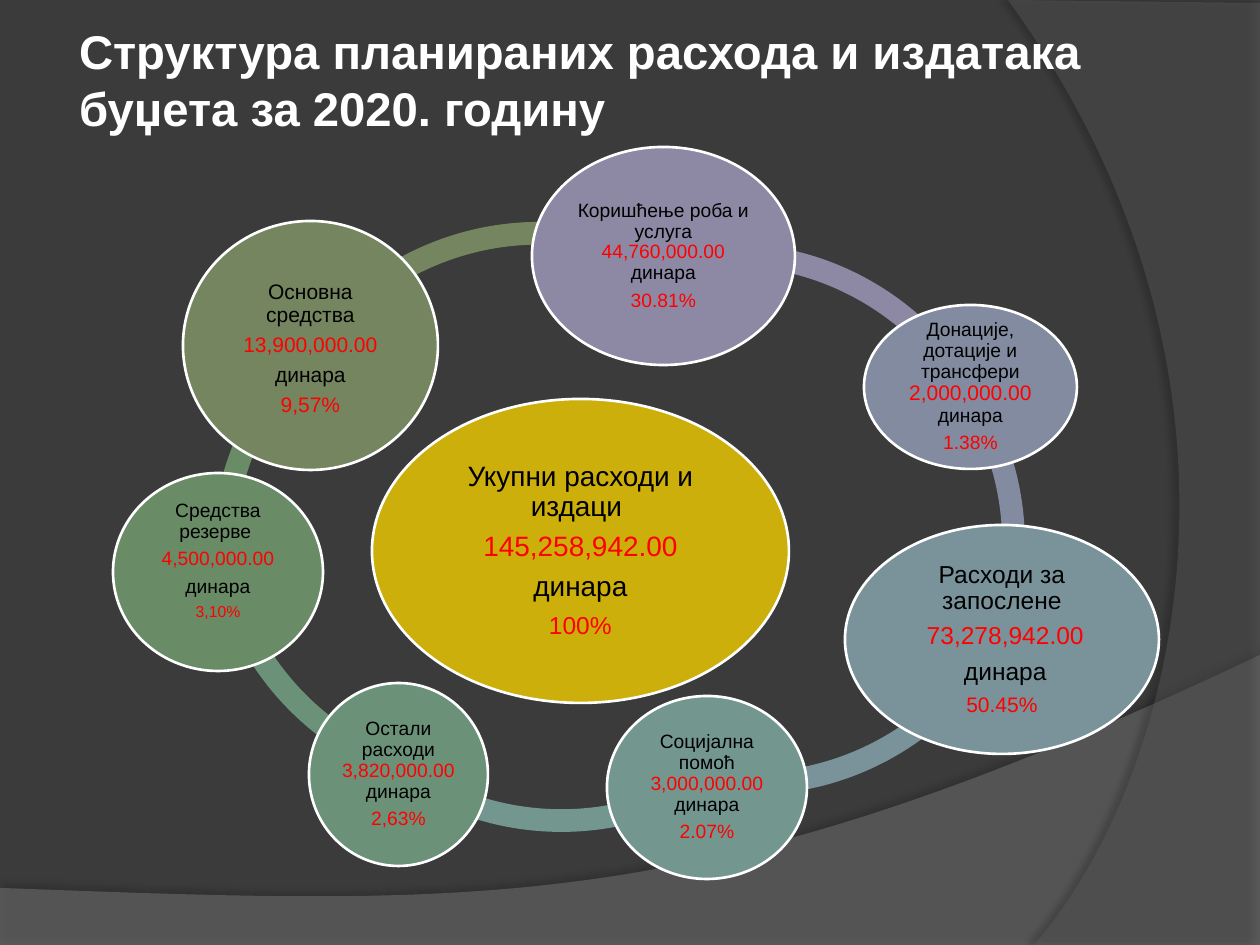
from dataclasses import dataclass
from typing import NamedTuple

from lxml.etree import SubElement
from pptx import Presentation
from pptx.dml.color import RGBColor
from pptx.enum.shapes import MSO_SHAPE
from pptx.enum.text import MSO_ANCHOR, MSO_AUTO_SIZE, PP_ALIGN
from pptx.oxml.ns import qn
from pptx.util import Pt

EMU_PER_PX = 914400 / 126
FONT = "Arial"
BLACK, RED, WHITE = "000000", "FF0000", "FFFFFF"
ARC_SIZE = 581
ARC_THICKNESS = 0.039
INSET = 3


class Point(NamedTuple):
    x: int
    y: int


class Box(NamedTuple):
    left: int
    top: int
    width: int
    height: int


class Piece(NamedTuple):
    text: str
    size: int
    color: str = BLACK


@dataclass
class Bubble:
    box: Box
    fill: str
    paragraphs: list[list[Piece]]
    extra_top: int = 0
    extra_side: int = 0
    extra_bottom: int = 0


@dataclass
class Arc:
    position: Point
    start: float  # degrees, clockwise from the right
    end: float
    fill: str


@dataclass
class Band:
    corners: list[Point]  # the last corner starts the curve
    curve: tuple[Point, Point, Point]
    fill: str
    alpha: int
    shadow_alpha: int
    shadow_distance: float
    shadow_direction: int


BANDS = [
    Band([Point(0, 888), Point(0, 945), Point(1260, 945), Point(1260, 655)],
         (Point(704, 919), Point(493, 906), Point(0, 888)),
         "7F7F7F", 45, 35, 3.5, 270),
    Band([Point(1260, 3), Point(1260, 945), Point(1034, 945)],
         (Point(1178, 780), Point(1283, 378), Point(1008, 0)),
         "5E5E5E", 40, 45, 4, 180),
]

ARCS = [
    Arc(Point(249, 222), 215.99, 295.86, "748560"),
    Arc(Point(212, 263), 176.56, 227.26, "698B66"),
    Arc(Point(205, 215), 110.08, 166.85, "6B9279"),
    Arc(Point(271, 251), 59.48, 125.2, "73968F"),
    Arc(Point(460, 214), 28.13, 98.87, "7A939B"),
    Arc(Point(444, 253), 326.54, 19.71, "828B9F"),
    Arc(Point(437, 243), 257.13, 328.86, "8D89A4"),
]

BUBBLES = [
    Bubble(Box(372, 399, 417, 304), "CCAF0A", [
        [Piece("Укупни расходи и издаци ", 16)],
        [Piece("145,258,942.00", 16, RED)],
        [Piece("динара", 16)],
        [Piece("100%", 14, RED)]]),
    Bubble(Box(532, 147, 263, 218), "8D89A4", [
        [Piece("Коришћење роба и услуга ", 11), Piece("44,760,000.00 ", 11, RED),
         Piece("динара", 11)],
        [Piece("30.81%", 11, RED)]]),
    Bubble(Box(864, 305, 213, 164), "828B9F", [
        [Piece("Донације, дотације и трансфери ", 11),
         Piece("2,000,000.00 ", 12, RED), Piece("динара", 11)],
        [Piece("1.38%", 11, RED)]]),
    Bubble(Box(845, 525, 314, 229), "7A939B", [
        [Piece("Расходи за запослене", 14)],
        [Piece(" 73,278,942.00", 14, RED)],
        [Piece(" динара", 14)],
        [Piece("50.45%", 12, RED)]]),
    Bubble(Box(607, 696, 200, 183), "73968F", [
        [Piece("Социјална помоћ ", 11), Piece("3,000,000.00", 11, RED),
         Piece(" динара", 11)],
        [Piece("2.07%", 11, RED)]]),
    Bubble(Box(309, 683, 179, 183), "6B9279", [
        [Piece("Остали расходи ", 11), Piece("3,820,000.00 ", 11, RED),
         Piece("динара", 11)],
        [Piece("2,63%", 11, RED)]]),
    Bubble(Box(113, 473, 210, 198), "698B66", [
        [Piece("Средства резерве ", 11)],
        [Piece("4,500,000.00", 11, RED)],
        [Piece("динара", 11)],
        [Piece("3,10%", 9, RED)]], extra_bottom=22),
    Bubble(Box(183, 221, 255, 249), "748560", [
        [Piece("Основна средства", 12)],
        [Piece("13,900,000.00", 12, RED)],
        [Piece("динара", 12)],
        [Piece("9,57%", 12, RED)]], extra_top=7, extra_side=12),
]


def px(length: float) -> int:
    return round(length * EMU_PER_PX)


def rgb(color: str) -> RGBColor:
    return RGBColor.from_string(color)


def paint(shape, fill: str) -> None:
    shape.shadow.inherit = False
    shape.fill.solid()
    shape.fill.fore_color.rgb = rgb(fill)
    shape.line.fill.background()


def add_piece(paragraph, piece: Piece, bold: bool = False) -> None:
    run = paragraph.add_run()
    run.text = piece.text
    run.font.name = FONT
    run.font.size = Pt(piece.size)
    run.font.bold = bold
    run.font.color.rgb = rgb(piece.color)


def set_insets(frame, top: int, side: int, bottom: int) -> None:
    frame.margin_left = frame.margin_right = px(side)
    frame.margin_top, frame.margin_bottom = px(top), px(bottom)
    frame.vertical_anchor = MSO_ANCHOR.MIDDLE
    frame.word_wrap = True


def curve_points(start: Point, curve: tuple[Point, Point, Point], steps: int = 60):
    first, second, end = curve
    for step in range(1, steps + 1):
        t = step / steps
        u = 1 - t
        yield tuple(px(u**3 * a + 3 * u * u * t * b + 3 * u * t * t * c + t**3 * d)
                    for a, b, c, d in zip(start, first, second, end))


def add_band(slide, band: Band) -> None:
    corners = [(px(x), px(y)) for x, y in band.corners]
    builder = slide.shapes.build_freeform(*corners[0], scale=1.0)
    builder.add_line_segments(
        corners[1:] + list(curve_points(band.corners[-1], band.curve)), close=True)
    shape = builder.convert_to_shape()
    paint(shape, band.fill)
    properties = shape._element.spPr
    color = properties.find(qn("a:solidFill")).find(qn("a:srgbClr"))
    SubElement(color, qn("a:alpha"), val=str(band.alpha * 1000))
    shadow = SubElement(
        properties.find(qn("a:effectLst")), qn("a:outerShdw"),
        blurRad=str(Pt(4)), dist=str(Pt(band.shadow_distance)),
        dir=str(band.shadow_direction * 60000), rotWithShape="0")
    shadow_color = SubElement(shadow, qn("a:srgbClr"), val=BLACK)
    SubElement(shadow_color, qn("a:alpha"), val=str(band.shadow_alpha * 1000))


def add_arc(slide, arc: Arc) -> None:
    shape = slide.shapes.add_shape(MSO_SHAPE.BLOCK_ARC, px(arc.position.x),
                                   px(arc.position.y), px(ARC_SIZE), px(ARC_SIZE))
    paint(shape, arc.fill)
    # Angles are stored in 60000ths of a degree, adjustments in 100000ths
    for index, value in enumerate((arc.start * 0.6, arc.end * 0.6, ARC_THICKNESS)):
        shape.adjustments[index] = value


def add_bubble(slide, bubble: Bubble) -> None:
    shape = slide.shapes.add_shape(MSO_SHAPE.OVAL, *map(px, bubble.box))
    paint(shape, bubble.fill)
    shape.line.color.rgb = rgb(WHITE)
    shape.line.width = Pt(1.5)
    frame = shape.text_frame
    set_insets(frame, INSET + bubble.extra_top, INSET + bubble.extra_side,
               INSET + bubble.extra_bottom)
    for index, pieces in enumerate(bubble.paragraphs):
        paragraph = frame.add_paragraph() if index else frame.paragraphs[0]
        paragraph.alignment = PP_ALIGN.CENTER
        paragraph.line_spacing = 0.9
        if index < len(bubble.paragraphs) - 1:
            paragraph.space_after = Pt(round(pieces[0].size * 0.35, 1))
        for piece in pieces:
            add_piece(paragraph, piece)


def place_title(slide) -> None:
    title = slide.shapes.title
    title.left, title.top, title.width, title.height = map(px, Box(73, 21, 1187, 117))
    frame = title.text_frame
    frame.auto_size = MSO_AUTO_SIZE.NONE
    set_insets(frame, 6, 6, 6)
    frame.margin_right = px(60)
    paragraph = frame.paragraphs[0]
    paragraph.alignment = PP_ALIGN.LEFT
    add_piece(paragraph, Piece(
        "Структура планираних расхода и издатака буџета за 2020. годину", 27, WHITE),
        bold=True)
    # Bring the title in front of the background bands
    slide.shapes._spTree.append(title._element)


def main() -> None:
    presentation = Presentation()
    presentation.slide_width, presentation.slide_height = px(1260), px(945)
    slide = presentation.slides.add_slide(presentation.slide_layouts[5])
    slide.background.fill.solid()
    slide.background.fill.fore_color.rgb = rgb("3B3B3B")

    # Background bands and title
    for band in BANDS:
        add_band(slide, band)
    place_title(slide)

    # Ring of arcs with the bubbles on top
    for arc in ARCS:
        add_arc(slide, arc)
    for bubble in BUBBLES:
        add_bubble(slide, bubble)
    presentation.save("out.pptx")


if __name__ == "__main__":
    main()
